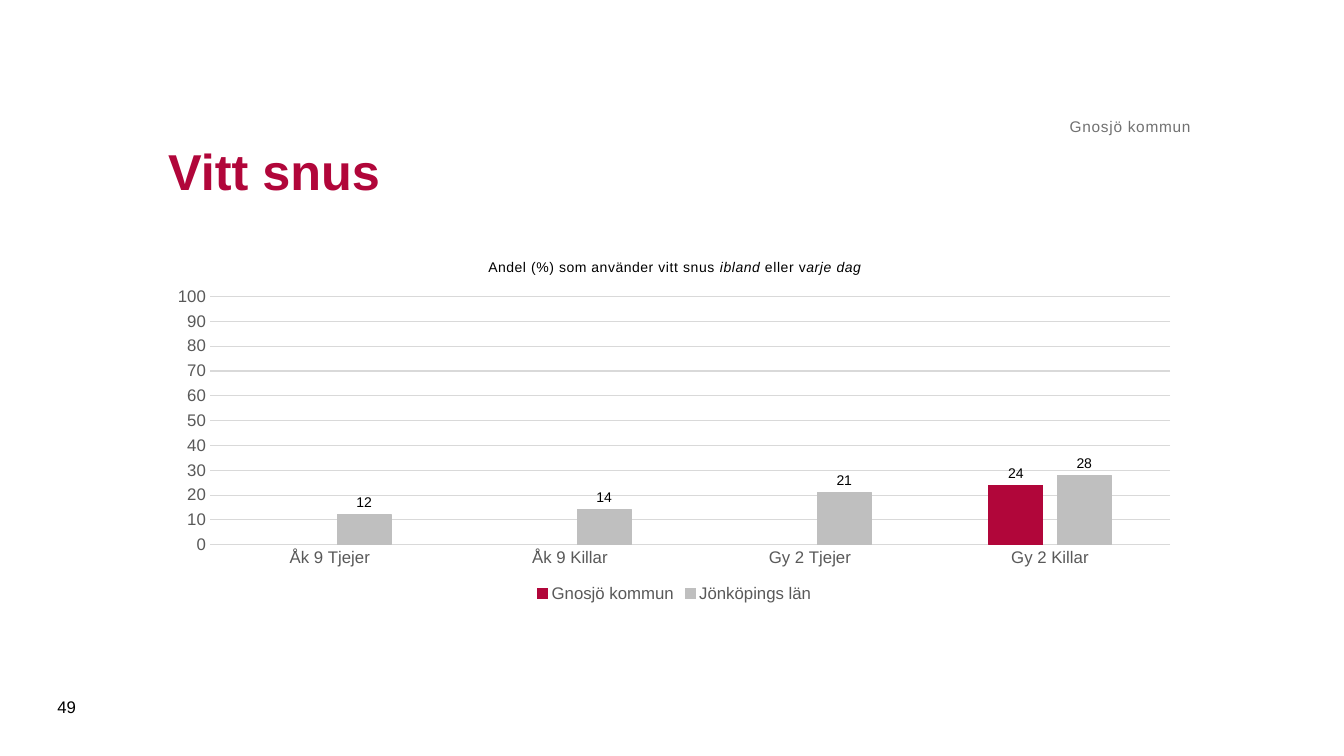
from lxml import etree
from pptx import Presentation
from pptx.chart.data import CategoryChartData
from pptx.dml.color import RGBColor
from pptx.enum.chart import (XL_CHART_TYPE, XL_LABEL_POSITION as LabelPos,
                             XL_LEGEND_POSITION as LegendPos, XL_TICK_MARK as Tick)
from pptx.enum.text import MSO_ANCHOR as Anchor, PP_ALIGN as Align
from pptx.oxml.ns import qn
from pptx.util import Inches, Pt

RED, GREY, GRID, LABEL, BLACK = "B1063A", "BFBFBF", "D9D9D9", "595959", "000000"
NUMBER = "#,##0;#,##0"
LEFT, WIDTH = 1.57, 10.24


def style(font, size, color, bold=False, italic=False):
    font.name, font.size, font.bold, font.italic = "Arial", Pt(size), bold, italic
    font.color.rgb = RGBColor.from_string(color)


def add_text(box, text, size, color, anchor=Anchor.MIDDLE, bold=False):
    tf = s.shapes.add_textbox(*map(Inches, box)).text_frame
    tf.word_wrap, tf.vertical_anchor = True, anchor
    r = tf.paragraphs[0].add_run()
    r.text = text
    style(r.font, size, color, bold)
    return tf


prs = Presentation()
prs.slide_width, prs.slide_height = Inches(13.33), Inches(7.5)
s = prs.slides.add_slide(prs.slide_layouts[6])

# Chart
data = CategoryChartData()
data.categories = [f"{grade} {group}" for grade in ("Åk 9", "Gy 2")
                   for group in ("Tjejer", "Killar")]
data.add_series("Gnosjö kommun", (None, None, None, 24))
data.add_series("Jönköpings län", (12, 14, 21, 28))
chart = s.shapes.add_chart(XL_CHART_TYPE.COLUMN_CLUSTERED,
                           *map(Inches, (LEFT, 2.4, WIDTH, 3.62)), data).chart
style(chart.font, 10, BLACK)

p = chart.chart_title.text_frame.paragraphs[0]
for text, italic in (("Andel (%) som\u00a0använder vitt snus ", False), ("ibland", True),
                     (" eller v", False), ("arje dag", True)):
    r = p.add_run()
    r.text = text
    style(r.font, 10, BLACK, italic=italic)
    r.font._element.set("spc", "50")
chart.chart_title.include_in_layout = False

chart.has_legend = True
chart.legend.position = LegendPos.BOTTOM
chart.legend.include_in_layout = False
style(chart.legend.font, 12, LABEL)

cat, val = chart.category_axis, chart.value_axis
for axis in (cat, val):
    axis.major_tick_mark = axis.minor_tick_mark = Tick.NONE
    style(axis.tick_labels.font, 12, LABEL)
val.minimum_scale, val.maximum_scale, val.major_unit = 0, 100, 10
val.tick_labels.number_format = NUMBER
val.tick_labels.number_format_is_linked = False
val.format.line.fill.background()
for line in (cat.format.line, val.major_gridlines.format.line):
    line.color.rgb = RGBColor.from_string(GRID)
    line.width = Pt(0.75)

plot = chart.plots[0]
plot.gap_width, plot.overlap, plot.vary_by_categories = 219, -27, False
for series, color in zip(plot.series, (RED, GREY)):
    series.invert_if_negative = False
    series.format.fill.solid()
    series.format.fill.fore_color.rgb = RGBColor.from_string(color)
    series.format.line.color.rgb = RGBColor.from_string(color)
    series.format.line.width = Pt(0.75)
    labels = series.data_labels
    labels.show_value, labels.position = True, LabelPos.OUTSIDE_END
    labels.number_format, labels.number_format_is_linked = NUMBER, False
    style(labels.font, 10, BLACK)

# Plot area as shares of the chart
area = chart._chartSpace.find(".//" + qn("c:plotArea"))
for old in area.findall(qn("c:layout")):
    area.remove(old)
layout = etree.Element(qn("c:layout"))
area.insert(0, layout)
manual = etree.SubElement(layout, qn("c:manualLayout"))
for tag, value in (("layoutTarget", "inner"), ("xMode", "edge"), ("yMode", "edge"),
                   ("x", "0.05"), ("y", "0.15"), ("w", "0.93"), ("h", "0.68")):
    etree.SubElement(manual, qn("c:" + tag)).set("val", value)

# Texts
add_text((LEFT, 0.98, WIDTH, 1.42), "Vitt snus", 36, RED, bold=True)
tf = add_text((LEFT, 0.62, WIDTH, 0.73), "Gnosjö kommun", 11, "717171", Anchor.BOTTOM)
tf.margin_left = tf.margin_right = tf.margin_top = tf.margin_bottom = 0
tf.paragraphs[0].alignment = Align.RIGHT
tf.paragraphs[0].runs[0].font._element.set("spc", "50")
add_text((0.47, 6.81, 0.57, 0.4), "49", 12, BLACK)

prs.save("out.pptx")
